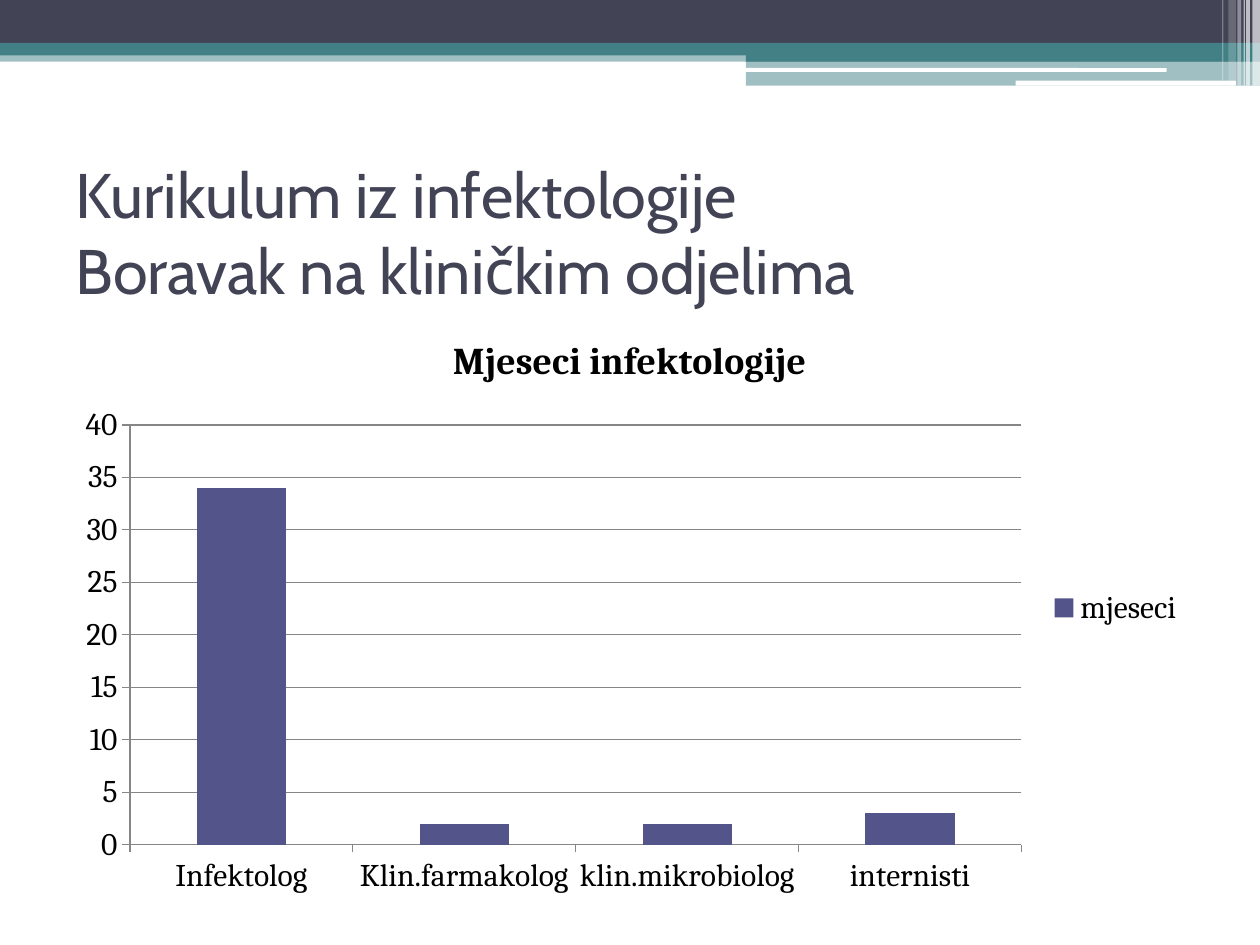
import pptx
import pptx.chart.data
import pptx.dml.color
import pptx.enum.chart
import pptx.enum.shapes
import pptx.enum.text
import pptx.oxml
import pptx.oxml.ns
import pptx.util

Inches = pptx.util.Inches
Pt = pptx.util.Pt
RGBColor = pptx.dml.color.RGBColor
MSO_SHAPE = pptx.enum.shapes.MSO_SHAPE

NAVY = RGBColor(0x42, 0x44, 0x56)
TEAL = RGBColor(0x43, 0x80, 0x86)
WHITE = RGBColor(0xFF, 0xFF, 0xFF)
BLACK = RGBColor(0, 0, 0)
VIOLET = RGBColor(0x53, 0x54, 0x8A)
GRAY = RGBColor(0x86, 0x86, 0x86)

BANDS = [
    (0, 0.4, 10, 0.09, TEAL, 50),
    (0, 0, 10, 0.34, NAVY, 100),
    (0, 0.34, 10, 0.1, TEAL, 100),
    (5.92, 0.39, 4.08, 0.1, TEAL, 100),
    (5.92, 0.48, 4.08, 0.2, TEAL, 50),
]
HIGHLIGHTS = [(5.91, 0.54, 3.35, 0.03), (8.06, 0.64, 1.75, 0.04)]
STRIPES = [
    (9.94, 0.06, 0.68, 65),
    (9.89, 0.03, 0.68, 65),
    (9.87, 0.01, 0.68, 60),
    (9.82, 0.03, 0.68, 40),
    (9.75, 0.06, 0.64, 20),
    (9.7, 0.01, 0.64, 30),
]
TITLE_LINES = ["Kurikulum iz infektologije", "Boravak na kliničkim odjelima"]
MONTHS = {"Infektolog": 34, "Klin.farmakolog": 2, "klin.mikrobiolog": 2, "internisti": 3}


def apply_format(target, values):
    for attribute, value in values.items():
        setattr(target, attribute, value)


def format_font(font, name, size, color, bold=False):
    apply_format(font, {"name": name, "size": Pt(size), "bold": bold})
    font.color.rgb = color


def add_bar(slide, left, top, width, height, color, opacity=100, preset=MSO_SHAPE.RECTANGLE):
    bar = slide.shapes.add_shape(
        preset, Inches(left), Inches(top), Inches(width), Inches(height))
    bar.shadow.inherit = False
    bar.line.fill.background()
    bar.fill.solid()
    bar.fill.fore_color.rgb = color
    if opacity < 100:
        tint = bar.fill._xPr.find(".//" + pptx.oxml.ns.qn("a:srgbClr"))
        alpha = pptx.oxml.parse_xml(
            f'<a:alpha {pptx.oxml.ns.nsdecls("a")} val="{opacity * 1000}"/>')
        tint.append(alpha)


def add_header(slide):
    for band in BANDS:
        add_bar(slide, *band)
    for highlight in HIGHLIGHTS:
        add_bar(slide, *highlight, WHITE, preset=MSO_SHAPE.ROUNDED_RECTANGLE)
    for left, width, height, opacity in STRIPES:
        add_bar(slide, left, 0, width, height, WHITE, opacity)


def fill_title(slide):
    heading = slide.shapes.title
    apply_format(heading, {"left": Inches(0.5), "top": Inches(1.25),
                           "width": Inches(9), "height": Inches(1.17)})
    apply_format(heading.text_frame, {
        "word_wrap": True,
        "auto_size": pptx.enum.text.MSO_AUTO_SIZE.NONE,
        "vertical_anchor": pptx.enum.text.MSO_ANCHOR.MIDDLE,
    })
    paragraph = heading.text_frame.paragraphs[0]
    paragraph.alignment = pptx.enum.text.PP_ALIGN.LEFT
    for index, line in enumerate(TITLE_LINES):
        if index:
            paragraph.add_line_break()
        run = paragraph.add_run()
        run.text = line
        format_font(run.font, "Cabin", 36, NAVY)


def format_axes(chart):
    outside = pptx.enum.chart.XL_TICK_MARK.OUTSIDE
    for axis in (chart.category_axis, chart.value_axis):
        axis.major_tick_mark = outside
        axis.format.line.color.rgb = GRAY
        axis.format.line.width = Pt(0.75)
    apply_format(chart.value_axis, {"minimum_scale": 0, "maximum_scale": 40,
                                    "major_unit": 5, "has_major_gridlines": True})
    gridline = chart.value_axis.major_gridlines.format.line
    gridline.color.rgb = GRAY
    gridline.width = Pt(0.75)


def add_months_chart(slide):
    months = pptx.chart.data.CategoryChartData()
    months.categories = list(MONTHS)
    months.add_series("mjeseci", list(MONTHS.values()))
    chart = slide.shapes.add_chart(
        pptx.enum.chart.XL_CHART_TYPE.COLUMN_CLUSTERED,
        Inches(0.5), Inches(2.46), Inches(9), Inches(4.73), months).chart
    format_font(chart.font, "Cambria", 18, BLACK)
    apply_format(chart, {"has_title": True, "has_legend": True})
    caption = chart.chart_title.text_frame
    caption.text = "Mjeseci infektologije"
    format_font(caption.paragraphs[0].runs[0].font, "Cambria", 21.6, BLACK, True)
    apply_format(chart.legend, {
        "position": pptx.enum.chart.XL_LEGEND_POSITION.RIGHT,
        "include_in_layout": False,
    })
    apply_format(chart.plots[0], {"gap_width": 150, "vary_by_categories": False})
    columns = chart.plots[0].series[0].format.fill
    columns.solid()
    columns.fore_color.rgb = VIOLET
    format_axes(chart)


def main():
    presentation = pptx.Presentation()
    apply_format(presentation, {"slide_width": Inches(10), "slide_height": Inches(7.5)})
    slide = presentation.slides.add_slide(presentation.slide_layouts.get_by_name("Title Only"))
    add_header(slide)
    fill_title(slide)
    add_months_chart(slide)
    presentation.save("out.pptx")


if __name__ == "__main__":
    main()
